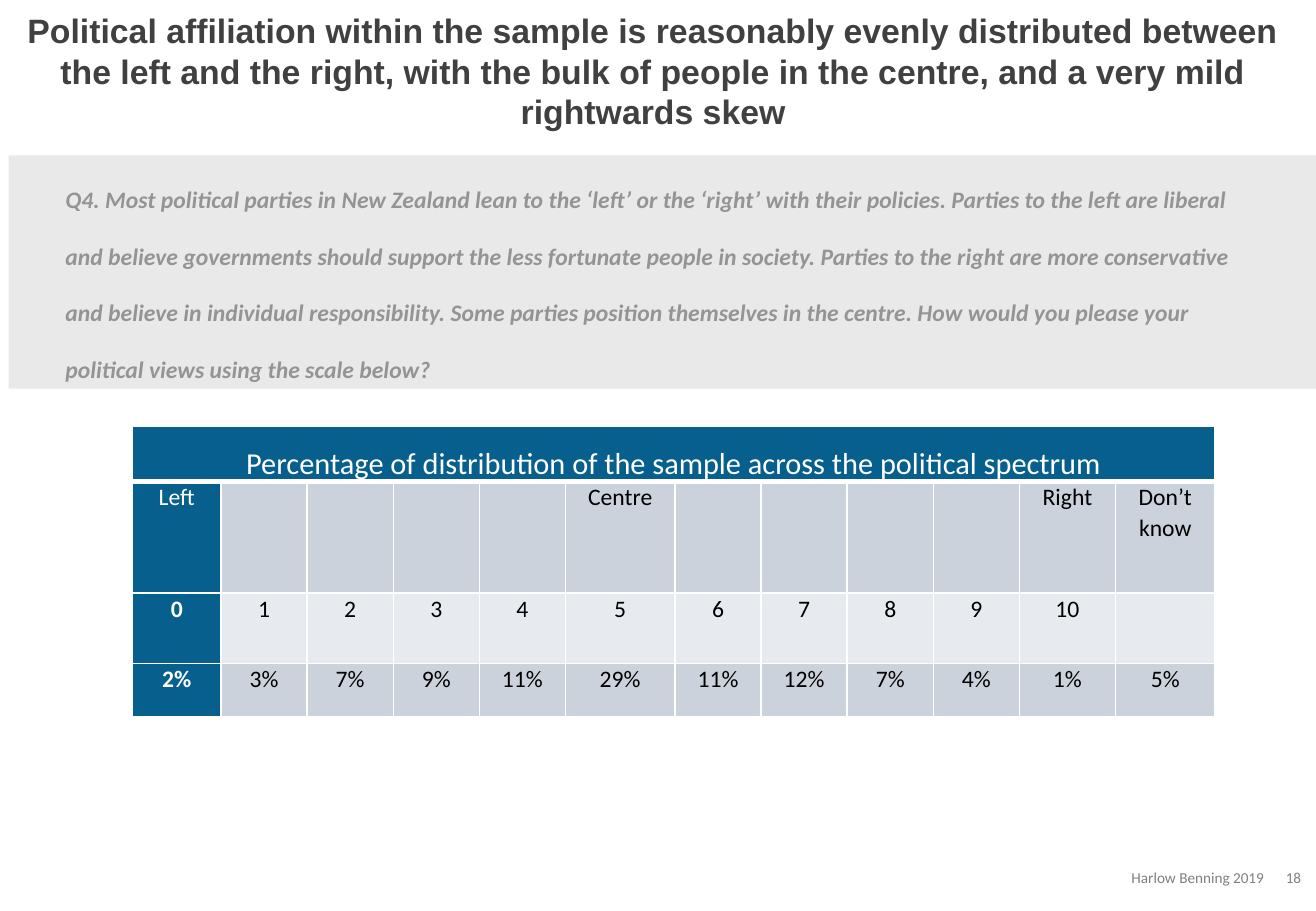
"""Build the slide on political affiliation within the sample."""
from dataclasses import dataclass

import lxml.etree
import pptx
import pptx.dml.color
import pptx.enum.shapes
import pptx.enum.text
import pptx.oxml.ns
import pptx.slide
import pptx.table
import pptx.text.text
import pptx.util

Cm = pptx.util.Cm
Pt = pptx.util.Pt
RGBColor = pptx.dml.color.RGBColor
Align = pptx.enum.text.PP_ALIGN
Anchor = pptx.enum.text.MSO_ANCHOR
AutoSize = pptx.enum.text.MSO_AUTO_SIZE
qn = pptx.oxml.ns.qn

WHITE = RGBColor(0xFF, 0xFF, 0xFF)
BLACK = RGBColor(0, 0, 0)
CHARCOAL = RGBColor(0x40, 0x40, 0x40)
GREY = RGBColor(0x80, 0x80, 0x80)
SILVER = RGBColor(0xBF, 0xBF, 0xBF)
BLUE = RGBColor(0x07, 0x5F, 0x8D)
BAND_DARK = RGBColor(0xCC, 0xD2, 0xDB)
BAND_LIGHT = RGBColor(0xE7, 0xEA, 0xEE)

TITLE = (
    "Political affiliation within the sample is reasonably evenly distributed between "
    "the left and the right, with the bulk of people in the centre, and a very mild "
    "rightwards skew"
)
QUESTION = (
    "Q4. Most political parties in New Zealand lean to the ‘left’ or the ‘right’ with their "
    "policies. Parties to the left are liberal and believe governments should support the less "
    "fortunate people in society. Parties to the right are more conservative and believe in "
    "individual responsibility. Some parties position themselves in the centre. How would you "
    "please your political views using the scale below?"
)
TABLE_HEADING = "Percentage of distribution of the sample across the political spectrum"
POSITIONS = ["Left", "", "", "", "", "Centre", "", "", "", "", "Right", "Don’t know"]
SCALE = [str(point) for point in range(11)] + [""]
SHARES = [f"{share}%" for share in (2, 3, 7, 9, 11, 29, 11, 12, 7, 4, 1, 5)]
COLUMN_WIDTHS = [1.85] + [1.8] * 4 + [2.29] + [1.8] * 4 + [2.01, 2.08]


@dataclass(frozen=True)
class TextStyle:
    size: float
    color: RGBColor
    font: str = "Calibri"
    bold: bool = False
    italic: bool = False
    align: Align = Align.CENTER
    line_spacing: float = 1.0
    space_after: float = 0


@dataclass(frozen=True)
class TextBox:
    text: str
    left: float
    top: float
    width: float
    height: float
    style: TextStyle
    anchor: Anchor = Anchor.MIDDLE
    wrap: bool = True


@dataclass(frozen=True)
class TableRow:
    values: list[str]
    height: float
    fill: RGBColor
    bold_first: bool = True


TITLE_STYLE = TextStyle(20, CHARCOAL, font="Arial", bold=True)
QUESTION_STYLE = TextStyle(14, GREY, bold=True, italic=True, align=Align.LEFT, line_spacing=2.0)
HEADING_STYLE = TextStyle(18, WHITE, line_spacing=1.5, space_after=8)

TEXT_BOXES = [
    TextBox("Harlow Benning 2019", 21.72, 18.03, 4.95, 0.64, TextStyle(9, GREY, align=Align.RIGHT)),
    TextBox("18", 26.62, 18.03, 0.84, 0.64, TextStyle(9, GREY), wrap=False),
    TextBox(QUESTION, 1.12, 3.15, 25.3, 4.88, QUESTION_STYLE, Anchor.TOP),
]
TABLE_ROWS = [
    TableRow([TABLE_HEADING] + [""] * 11, 0.2, BLUE),
    TableRow(POSITIONS, 2.34, BAND_DARK, bold_first=False),
    TableRow(SCALE, 1.47, BAND_LIGHT),
    TableRow(SHARES, 1.12, BAND_DARK),
]


def write(frame: pptx.text.text.TextFrame, text: str, style: TextStyle) -> None:
    paragraph = frame.paragraphs[0]
    paragraph.alignment = style.align
    paragraph.line_spacing = style.line_spacing
    paragraph.space_before = Pt(0)
    paragraph.space_after = Pt(style.space_after)
    run = paragraph.add_run()
    run.text = text
    run.font.name = style.font
    run.font.size = Pt(style.size)
    run.font.bold = style.bold
    run.font.italic = style.italic
    run.font.color.rgb = style.color


def add_title(slide: pptx.slide.Slide) -> None:
    title = slide.shapes.title
    title.left, title.top, title.width, title.height = Cm(0.18), Cm(0.64), Cm(26.95), Cm(1.68)
    title.text_frame.word_wrap = True
    title.text_frame.auto_size = AutoSize.NONE
    title.text_frame.vertical_anchor = Anchor.MIDDLE
    write(title.text_frame, TITLE, TITLE_STYLE)


def add_text_box(slide: pptx.slide.Slide, box: TextBox) -> None:
    shape = slide.shapes.add_textbox(Cm(box.left), Cm(box.top), Cm(box.width), Cm(box.height))
    shape.text_frame.word_wrap = box.wrap
    shape.text_frame.vertical_anchor = box.anchor
    write(shape.text_frame, box.text, box.style)


def add_question_band(slide: pptx.slide.Slide) -> None:
    band = slide.shapes.add_shape(
        pptx.enum.shapes.MSO_SHAPE.RECTANGLE, Cm(0.18), Cm(3.25), Cm(27.51), Cm(4.88)
    )
    band.shadow.inherit = False
    band.line.fill.background()
    band.fill.solid()
    band.fill.fore_color.rgb = SILVER
    color = band.fill._xPr.find(".//" + qn("a:srgbClr"))
    lxml.etree.SubElement(color, qn("a:alpha"), val="33000")


def add_borders(cell: pptx.table._Cell, bottom_width: float) -> None:
    properties = cell._tc.get_or_add_tcPr()
    for side, width in (("L", 1), ("R", 1), ("T", 1), ("B", bottom_width)):
        line = lxml.etree.SubElement(properties, qn(f"a:ln{side}"), w=str(Pt(width)))
        fill = lxml.etree.SubElement(line, qn("a:solidFill"))
        lxml.etree.SubElement(fill, qn("a:srgbClr"), val=str(WHITE))


def add_spectrum_table(slide: pptx.slide.Slide) -> None:
    frame = slide.shapes.add_table(
        len(TABLE_ROWS), len(COLUMN_WIDTHS), Cm(2.77), Cm(8.92),
        Cm(sum(COLUMN_WIDTHS)), Cm(sum(row.height for row in TABLE_ROWS)),
    )
    table = frame.table
    table.first_row = False
    table.horz_banding = False
    for column, width in zip(table.columns, COLUMN_WIDTHS):
        column.width = Cm(width)
    for row_index, row in enumerate(TABLE_ROWS):
        table.rows[row_index].height = Cm(row.height)
        for column_index, value in enumerate(row.values):
            cell = table.cell(row_index, column_index)
            first = column_index == 0
            add_borders(cell, 3 if row_index == 0 else 1)
            cell.fill.solid()
            cell.fill.fore_color.rgb = BLUE if first else row.fill
            cell.margin_left = cell.margin_right = Cm(0.18)
            cell.margin_top = cell.margin_bottom = 0
            if value:
                style = HEADING_STYLE if row_index == 0 else TextStyle(
                    14, WHITE if first else BLACK, bold=first and row.bold_first,
                    line_spacing=1.07, space_after=8,
                )
                write(cell.text_frame, value, style)
    table.cell(0, 0).merge(table.cell(0, len(COLUMN_WIDTHS) - 1))


def main() -> None:
    presentation = pptx.Presentation()
    presentation.slide_width = Cm(27.51)
    presentation.slide_height = Cm(19.05)
    slide = presentation.slides.add_slide(presentation.slide_layouts[5])
    add_title(slide)
    for box in TEXT_BOXES:
        add_text_box(slide, box)
    add_question_band(slide)
    add_spectrum_table(slide)
    presentation.save("out.pptx")


if __name__ == "__main__":
    main()
